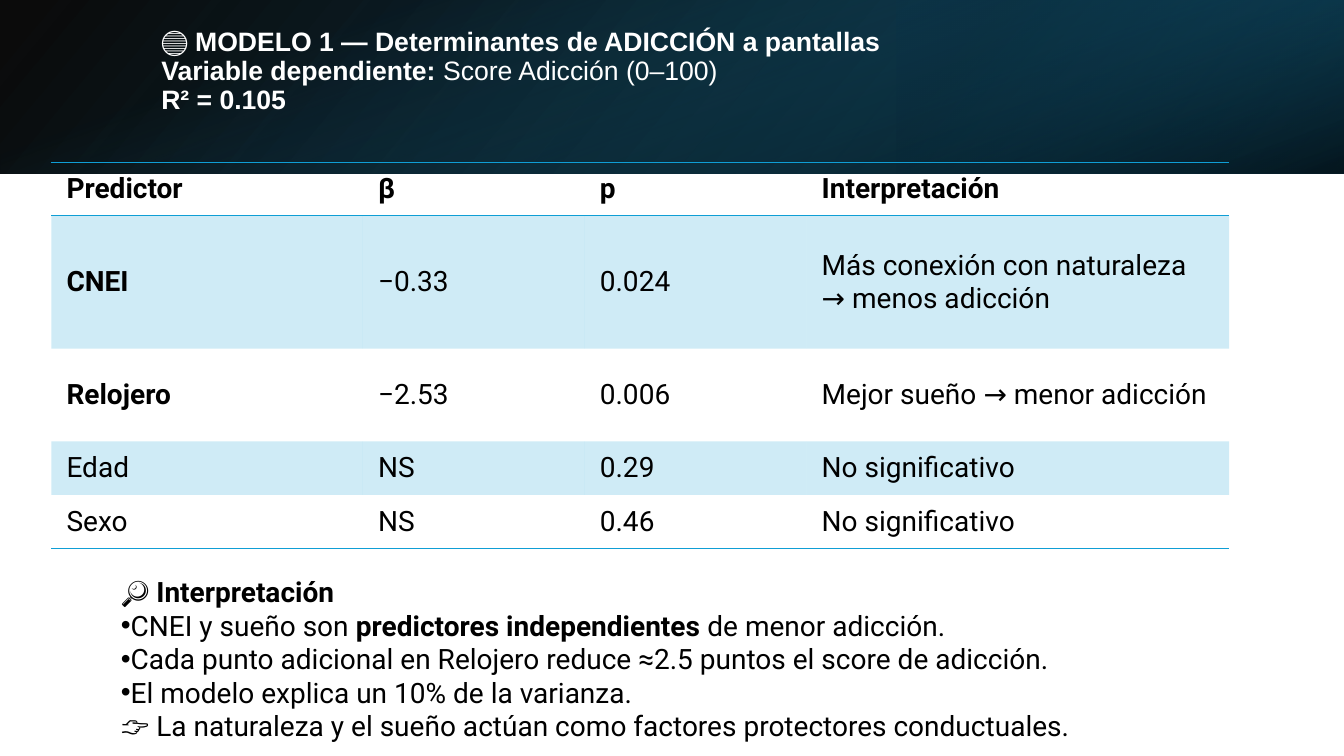
from lxml import etree
from pptx import Presentation
from pptx.dml.color import RGBColor as RGB
from pptx.enum.shapes import MSO_SHAPE as Shape
from pptx.enum.text import MSO_ANCHOR as Anchor, MSO_AUTO_SIZE as Auto, PP_ALIGN as Align
from pptx.oxml.ns import qn
from pptx.util import Inches, Pt

BLACK = RGB(0, 0, 0)
WHITE = RGB(255, 255, 255)
NAVY = RGB(0x0B, 0x30, 0x41)
TEAL = RGB(0x15, 0x60, 0x82)
DEEP = RGB(0x10, 0x48, 0x62)
BLUE = RGB(0x0F, 0x9E, 0xD5)
PLAIN = "{2D5ABB26-0587-4C30-8999-92F81FD0307C}"

WIDE, HIGH = 13.33, 1.72
BANDS = [
    ((0, 0, WIDE, HIGH), 0, True, 140, [(0, BLACK, 96), (100, DEEP, 100)]),
    ((8.89, 0, 4.44, HIGH), 180, True, 320, [(19, NAVY, 68), (100, TEAL, 79)]),
    (((WIDE - HIGH) / 2, (HIGH - WIDE) / 2, HIGH, WIDE), 90, False, 340,
     [(23, TEAL, 0), (99, BLACK, 74)]),
]
HEAD = [
    [("🔵 MODELO 1 — Determinantes de ADICCIÓN a pantallas", True)],
    [("Variable dependiente:", True), (" Score Adicción (0–100)", False)],
    [("R² = 0.105", True)],
]
COLS = [3.09, 2.2, 2.2, 4.19]
ROWS = [0.53, 1.32, 0.92, 0.53, 0.53]
DATA = [
    ["Predictor", "β", "p", "Interpretación"],
    ["CNEI", "−0.33", "0.024", "Más conexión con naturaleza → menos adicción"],
    ["Relojero", "−2.53", "0.006", "Mejor sueño → menor adicción"],
    ["Edad", "NS", "0.29", "No significativo"],
    ["Sexo", "NS", "0.46", "No significativo"],
]
NOTES = [
    (False, [("🔎 Interpretación", True)]),
    (True, [("CNEI y sueño son ", False), ("predictores independientes", True),
            (" de menor adicción.", False)]),
    (True, [("Cada punto adicional en Relojero reduce ≈2.5 puntos el score de adicción.", False)]),
    (True, [("El modelo explica un 10% de la varianza.", False)]),
    (False, [("👉 La naturaleza y el sueño actúan como factores protectores conductuales.", False)]),
]


def add(root, tag, **attrs):
    return etree.SubElement(root, qn(tag), {k: str(v) for k, v in attrs.items()})


def tint(root, color, alpha):
    node = add(root, "a:srgbClr", val=color)
    add(node, "a:alpha", val=alpha * 1000)


def write(para, parts, font, size, color):
    for text, bold in parts:
        run = para.add_run()
        run.text = text
        run.font.name = font
        run.font.size = Pt(size)
        run.font.bold = bold
        run.font.color.rgb = color


def add_band(slide, box, turn, flip, angle, stops):
    band = slide.shapes.add_shape(Shape.RECTANGLE, *map(Inches, box))
    band.rotation = turn
    band.shadow.inherit = False
    band.line.fill.background()
    if flip:
        band.element.spPr.find(qn("a:xfrm")).set("flipH", "1")
    band.fill.gradient()
    grad = band.element.spPr.find(qn("a:gradFill"))
    for node in list(grad):
        grad.remove(node)
    marks = add(grad, "a:gsLst")
    for pos, color, alpha in stops:
        tint(add(marks, "a:gs", pos=pos * 1000), color, alpha)
    add(grad, "a:lin", ang=angle * 60000, scaled=0)


def add_title(slide, box):
    title = slide.shapes.title
    title.element.getparent().append(title.element)
    title.left, title.top, title.width, title.height = map(Inches, box)
    frame = title.text_frame
    frame.word_wrap = True
    frame.auto_size = Auto.NONE
    frame.vertical_anchor = Anchor.MIDDLE
    frame.margin_bottom = Inches(0.34)
    for i, parts in enumerate(HEAD):
        para = frame.add_paragraph() if i else frame.paragraphs[0]
        para.alignment = Align.LEFT
        para.line_spacing = 0.9
        write(para, parts, "Arial", 19, WHITE)


def rule(cell, side):
    line = add(cell._tc.get_or_add_tcPr(), side, w=Pt(1))
    add(add(line, "a:solidFill"), "a:srgbClr", val=BLUE)


def add_grid(slide, box):
    frame = slide.shapes.add_table(len(ROWS), len(COLS), *map(Inches, box))
    table = frame.table
    table._tbl.tblPr.find(qn("a:tableStyleId")).text = PLAIN
    table.first_row = table.horz_banding = False
    for col, width in zip(table.columns, COLS):
        col.width = Inches(width)
    for r, (row, height) in enumerate(zip(table.rows, ROWS)):
        row.height = Inches(height)
        for c, cell in enumerate(row.cells):
            cell.vertical_anchor = Anchor.MIDDLE
            cell.margin_left = cell.margin_right = Inches(0.15)
            cell.margin_top = cell.margin_bottom = Inches(0.07)
            bold = r == 0 or (c == 0 and r < 3)
            write(cell.text_frame.paragraphs[0], [(DATA[r][c], bold)], "Roboto", 20, BLACK)
            if r == 0:
                rule(cell, "a:lnT")
            if r in (0, len(ROWS) - 1):
                rule(cell, "a:lnB")
            if r % 2:
                tint(add(cell._tc.get_or_add_tcPr(), "a:solidFill"), BLUE, 20)
            else:
                cell.fill.background()


def add_notes(slide, box):
    frame = slide.shapes.add_textbox(*map(Inches, box)).text_frame
    frame.word_wrap = True
    frame.auto_size = Auto.SHAPE_TO_FIT_TEXT
    for i, (dot, parts) in enumerate(NOTES):
        para = frame.add_paragraph() if i else frame.paragraphs[0]
        if dot:
            props = para._p.get_or_add_pPr()
            add(props, "a:buFont", typeface="Arial")
            add(props, "a:buChar", char="•")
        write(para, parts, "Roboto", 20, BLACK)


def main():
    deck = Presentation()
    deck.slide_width, deck.slide_height = Inches(WIDE), Inches(7.5)
    slide = deck.slides.add_slide(deck.slide_layouts[5])
    for band in BANDS:
        add_band(slide, *band)
    add_title(slide, (1.5, 0.38, 10.98, 0.96))
    add_grid(slide, (0.51, 1.61, sum(COLS), sum(ROWS)))
    add_notes(slide, (1.1, 5.65, 11.79, 1.78))
    deck.save("out.pptx")


if __name__ == "__main__":
    main()
